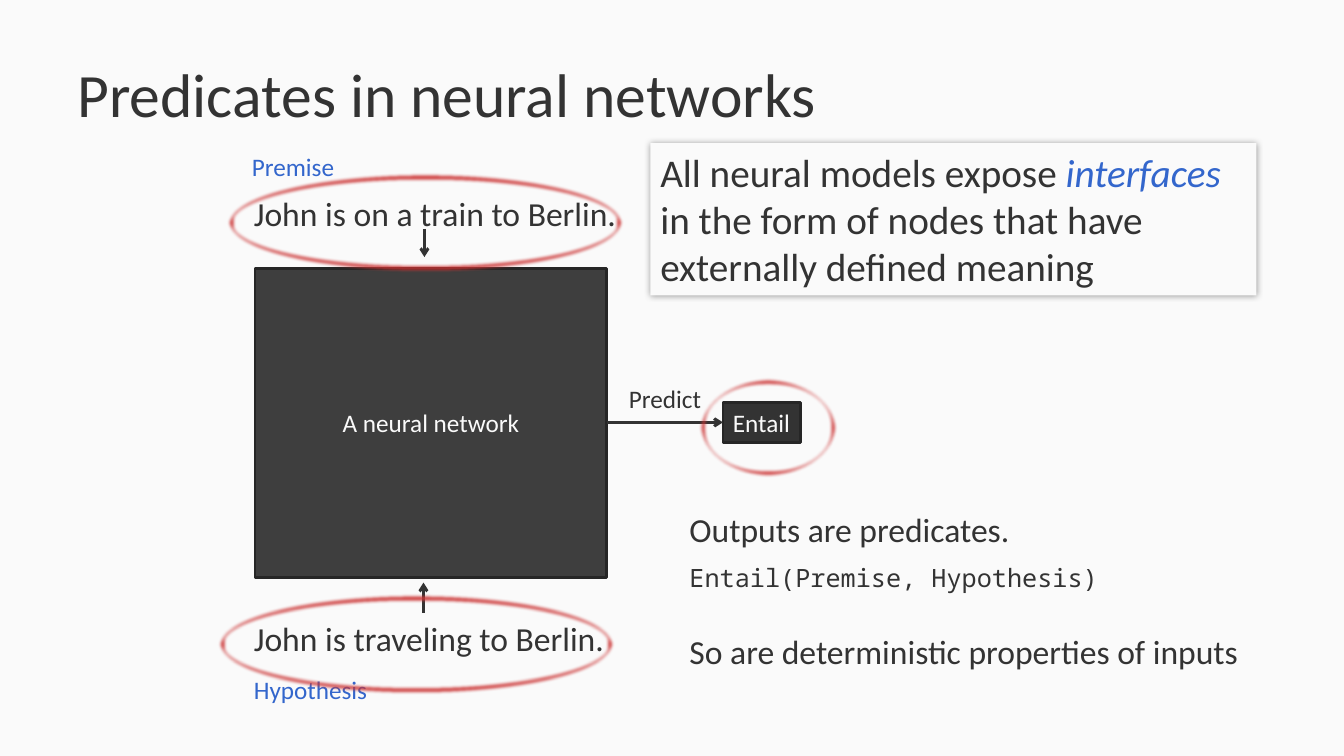
from lxml.etree import SubElement
from pptx import Presentation
from pptx.dml.color import RGBColor
from pptx.enum.shapes import MSO_CONNECTOR as Connector, MSO_SHAPE as Shape
from pptx.enum.text import MSO_ANCHOR as Anchor, MSO_AUTO_SIZE as AutoSize, PP_ALIGN as Align
from pptx.oxml import parse_xml
from pptx.oxml.ns import nsdecls, qn
from pptx.util import Inches, Pt

PAPER = RGBColor(0xFA, 0xFA, 0xFA)
INK = RGBColor(0x33, 0x33, 0x33)
NETWORK = RGBColor(0x3E, 0x3E, 0x3E)
BORDER = RGBColor(0x26, 0x26, 0x26)
BLUE = RGBColor(0x33, 0x66, 0xCC)
RED = RGBColor(0xCC, 0x33, 0x33)

SOFT_EDGE = f'<a:softEdge {nsdecls("a")} rad="{Pt(2.5)}"/>'
GLOW_SHADOW = (f'<a:outerShdw {nsdecls("a")} blurRad="{Pt(5)}" dist="0" dir="0" algn="ctr" '
               'rotWithShape="0"><a:srgbClr val="000000"><a:alpha val="40000"/>'
               '</a:srgbClr></a:outerShdw>')


class Canvas:
    """Draws on one slide; every place and length is a percentage of the slide's size."""

    def __init__(self, prs):
        self.prs = prs
        self.slide = prs.slides.add_slide(prs.slide_layouts[5])
        self.shapes = self.slide.shapes
        self.style = {"name": "Calibri", "size": Pt(18)}
        fill = self.slide.background.fill
        fill.solid()
        fill.fore_color.rgb = PAPER

    def place(self, *percents):
        sides = (self.prs.slide_width, self.prs.slide_height) * 2
        return [round(side * percent / 100) for side, percent in zip(sides, percents)]

    def set_text(self, frame, paragraphs, color=INK, wrap=True, anchor=Anchor.TOP,
                 align=Align.LEFT, gap=0, **style):
        """Each paragraph is a list of (text, format) runs; gap separates paragraphs."""
        for key, value in {"word_wrap": wrap, "vertical_anchor": anchor,
                           "auto_size": AutoSize.NONE}.items():
            setattr(frame, key, value)
        for index, runs in enumerate(paragraphs):
            paragraph = frame.add_paragraph() if index else frame.paragraphs[0]
            paragraph.alignment = align
            if index:
                paragraph.space_before = Pt(gap)
            for text, extra in runs:
                run = paragraph.add_run()
                run.text = text
                formats = {**self.style, **style, **extra}
                run.font.color.rgb = formats.pop("color", color)
                for key, value in formats.items():
                    setattr(run.font, key, value)

    def title(self, text, place):
        heading = self.shapes.title
        heading.left, heading.top, heading.width, heading.height = self.place(*place)
        self.set_text(heading.text_frame, [[(text, {})]], anchor=Anchor.MIDDLE, size=Pt(44))

    def text(self, place, *lines, **formats):
        box = self.shapes.add_textbox(*self.place(*place))
        self.set_text(box.text_frame, [[(line, {})] for line in lines], **formats)

    def box(self, place, runs, fill, border=None, effect=None, **formats):
        box = self.outline(Shape.RECTANGLE, place, border, 2, effect)
        box.fill.solid()
        box.fill.fore_color.rgb = fill
        self.set_text(box.text_frame, [runs], **formats)

    def outline(self, kind, place, color, width, effect=None):
        shape = self.shapes.add_shape(kind, *self.place(*place))
        shape.shadow.inherit = False
        shape.fill.background()
        if color is None:
            shape.line.fill.background()
        else:
            shape.line.color.rgb = color
            shape.line.width = Pt(width)
        if effect:
            shape._element.spPr.find(qn("a:effectLst")).append(parse_xml(effect))
        return shape

    def ring(self, place):
        self.outline(Shape.OVAL, place, RED, 7, SOFT_EDGE)

    def arrow(self, start, end):
        line = self.shapes.add_connector(Connector.STRAIGHT, *self.place(*start, *end))
        line.line.color.rgb = INK
        line.line.width = Pt(2)
        SubElement(line._element.spPr.find(qn("a:ln")), qn("a:tailEnd"), type="arrow")
        SubElement(line._element.spPr, qn("a:effectLst"))


def main():
    prs = Presentation()
    prs.slide_width, prs.slide_height = Inches(13.33), Inches(7.5)
    canvas = Canvas(prs)
    canvas.title("Predicates in neural networks", (5, 4, 90, 16.67))

    canvas.box((18.98, 35.47, 26.18, 40.93), [("A neural network", {})], NETWORK, BORDER,
               color=PAPER, anchor=Anchor.MIDDLE, align=Align.CENTER)
    canvas.box((53.79, 53.2, 5.78, 5.33), [("Entail", {})], INK, BORDER,
               color=PAPER, wrap=False)
    canvas.arrow((45.16, 55.87), (53.79, 55.87))
    canvas.text((46.06, 50, 6.9, 5.33), "Predict", wrap=False)

    for sentence, top, label, label_place in (
            ("John is on a train to Berlin.", 24.8, "Premise", (18, 19.33, 7.73, 5.33)),
            ("John is traveling to Berlin.", 81.07, "Hypothesis", (18.15, 88.53, 10.05, 5.33))):
        canvas.text((18.15, top, 31.43, 6.67), sentence, size=Pt(24))
        canvas.text(label_place, label, color=BLUE, wrap=False)
    canvas.arrow((31.58, 30.27), (31.58, 34))
    canvas.arrow((31.51, 81.07), (31.51, 77.07))

    claim = [("All neural models expose ", {}),
             ("interfaces ", {"color": BLUE, "italic": True}),
             ("in the form of nodes that have externally defined meaning", {})]
    canvas.box((48.39, 18.93, 45.09, 20.13), claim, PAPER, effect=GLOW_SHADOW, size=Pt(28))

    for place in ((52.36, 50.53, 9.6, 12), (17.25, 23.47, 28.81, 12), (16.58, 79.2, 28.81, 12)):
        canvas.ring(place)

    canvas.text((50.56, 66.67, 45.76, 22.93), "Outputs are predicates.",
                "So are deterministic properties of inputs", size=Pt(24), gap=58)
    canvas.text((50.56, 73.73, 32.03, 5.33), "Entail(Premise, Hypothesis)",
                wrap=False, name="Noto Sans Mono")
    prs.save("out.pptx")


if __name__ == "__main__":
    main()
